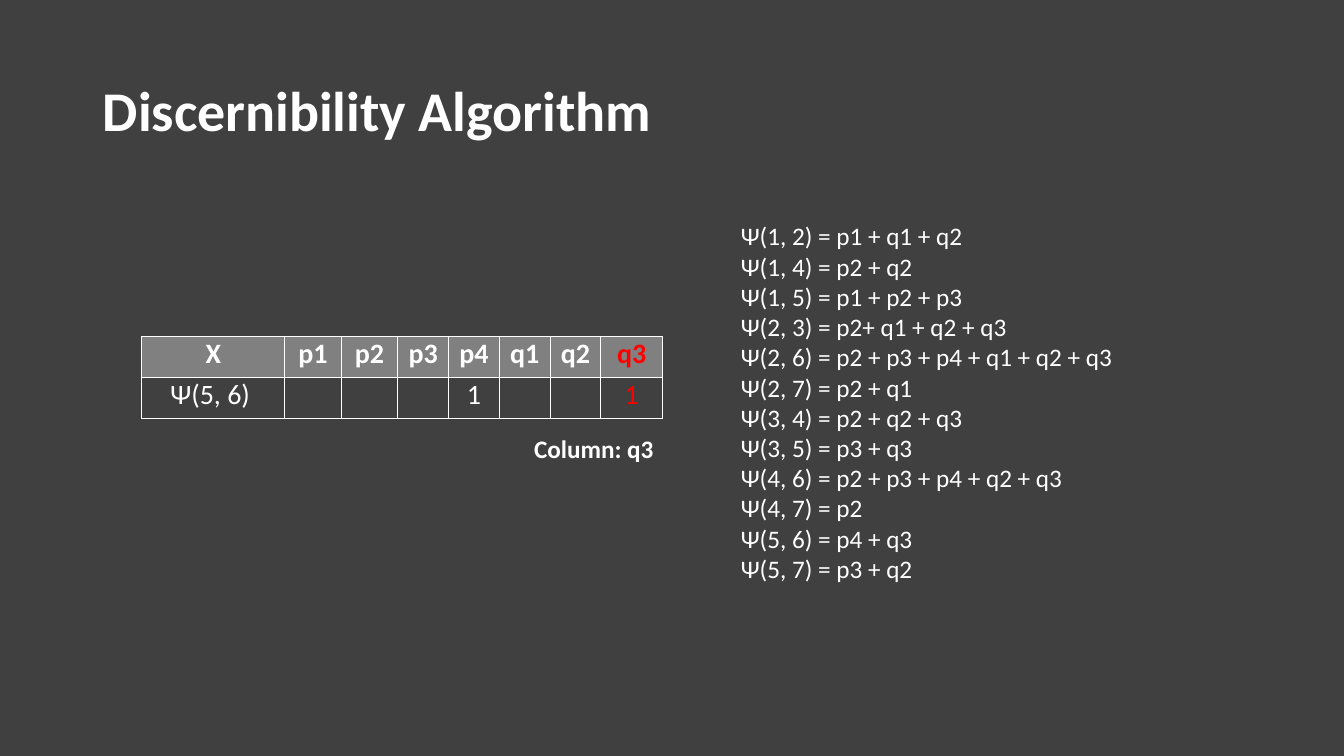
"""Build the Discernibility Algorithm slide with its table and list of functions."""
from lxml.etree import SubElement
from pptx import Presentation
from pptx.dml.color import RGBColor
from pptx.enum.text import MSO_ANCHOR, MSO_AUTO_SIZE, PP_ALIGN
from pptx.oxml import parse_xml
from pptx.oxml.ns import nsdecls, qn
from pptx.util import Inches, Pt

CHARCOAL = RGBColor(0x40, 0x40, 0x40)
GREY = RGBColor(0x80, 0x80, 0x80)
WHITE = RGBColor(0xFF, 0xFF, 0xFF)
RED = RGBColor(0xFF, 0x00, 0x00)

deck = Presentation()
deck.slide_width, deck.slide_height = Inches(13.33), Inches(7.5)
slide = deck.slides.add_slide(deck.slide_layouts[5])
slide.background.fill.solid()
slide.background.fill.fore_color.rgb = CHARCOAL


def share(left, top, width, height):
    """Turn percentages of the slide into a box."""
    across, down = deck.slide_width / 100, deck.slide_height / 100
    return [round(part) for part in (left * across, top * down, width * across, height * down)]


def write(paragraph, text, size, bold=False, color=WHITE):
    """Add one formatted run to a paragraph."""
    font = paragraph.add_run().font
    paragraph.runs[-1].text = text
    for name, value in {"name": "Calibri", "size": Pt(size), "bold": bold}.items():
        setattr(font, name, value)
    font.color.rgb = color


heading = slide.shapes.title
for name, value in zip(("left", "top", "width", "height"), share(6.9, 5.33, 86.25, 19.33)):
    setattr(heading, name, value)
for name, value in {"vertical_anchor": MSO_ANCHOR.MIDDLE, "auto_size": MSO_AUTO_SIZE.NONE,
                    "word_wrap": True}.items():
    setattr(heading.text_frame, name, value)
heading_line = heading.text_frame.paragraphs[0]
heading_line.alignment, heading_line.line_spacing = PP_ALIGN.LEFT, 0.9
write(heading_line, "Discernibility Algorithm", 40, True)

ROWS = [
    ["X", "p1", "p2", "p3", "p4", "q1", "q2", "q3"],
    ["Ψ(5, 6) ", "", "", "", "1", "", "", "1"],
]
COLUMN_SHARES = [10.65] + [4.2] * 2 + [3.78] * 4 + [4.6]
CELL_FORMAT = {"margin_left": Inches(0.07), "margin_right": Inches(0.07),
               "margin_top": 0, "margin_bottom": 0}

matrix = slide.shapes.add_table(2, 8, *share(10.55, 44.53, sum(COLUMN_SHARES), 10.8)).table
matrix.first_row = matrix.horz_banding = False
for column, percent in zip(matrix.columns, COLUMN_SHARES):
    column.width = round(deck.slide_width * percent / 100)

for row, entries in enumerate(ROWS):
    for col, entry in enumerate(entries):
        cell = matrix.cell(row, col)
        for name, value in CELL_FORMAT.items():
            setattr(cell, name, value)
        if row == 0:
            cell.fill.solid()
            cell.fill.fore_color.rgb = GREY
        else:
            cell.fill.background()
        cell_line = cell.text_frame.paragraphs[0]
        cell_line.alignment = PP_ALIGN.CENTER
        if entry:
            write(cell_line, entry, 20, row == 0, RED if col == 7 else WHITE)
        for position, side in enumerate(("lnL", "lnR", "lnT", "lnB")):
            border = parse_xml(f'<a:{side} {nsdecls("a")} w="{Pt(1)}"/>')
            SubElement(SubElement(border, qn("a:solidFill")), qn("a:srgbClr"), val=str(WHITE))
            cell._tc.get_or_add_tcPr().insert(position, border)

FUNCTIONS = [
    "Ψ(1, 2) = p1 + q1 + q2",
    "Ψ(1, 4) = p2 + q2",
    "Ψ(1, 5) = p1 + p2 + p3",
    "Ψ(2, 3) = p2+ q1 + q2 + q3",
    "Ψ(2, 6) = p2 + p3 + p4 + q1 + q2 + q3",
    "Ψ(2, 7) = p2 + q1",
    "Ψ(3, 4) = p2 + q2 + q3",
    "Ψ(3, 5) = p3 + q3",
    "Ψ(4, 6) = p2 + p3 + p4 + q2 + q3",
    "Ψ(4, 7) = p2",
    "Ψ(5, 6) = p4 + q3",
    "Ψ(5, 7) = p3 + q2",
]
NOTES = [
    (share(50.63, 28.53, 38.48, 49.87), FUNCTIONS, 1, False),
    (share(39, 56.67, 11.63, 5.33), ["Column: q3"], 0, True),
]
for box, lines, level, bold in NOTES:
    body = slide.shapes.add_textbox(*box).text_frame
    body.word_wrap, body.auto_size = True, MSO_AUTO_SIZE.SHAPE_TO_FIT_TEXT
    for number, text in enumerate(lines):
        line = body.add_paragraph() if number else body.paragraphs[0]
        line.level = level
        write(line, text, 18, bold)

deck.save("out.pptx")
